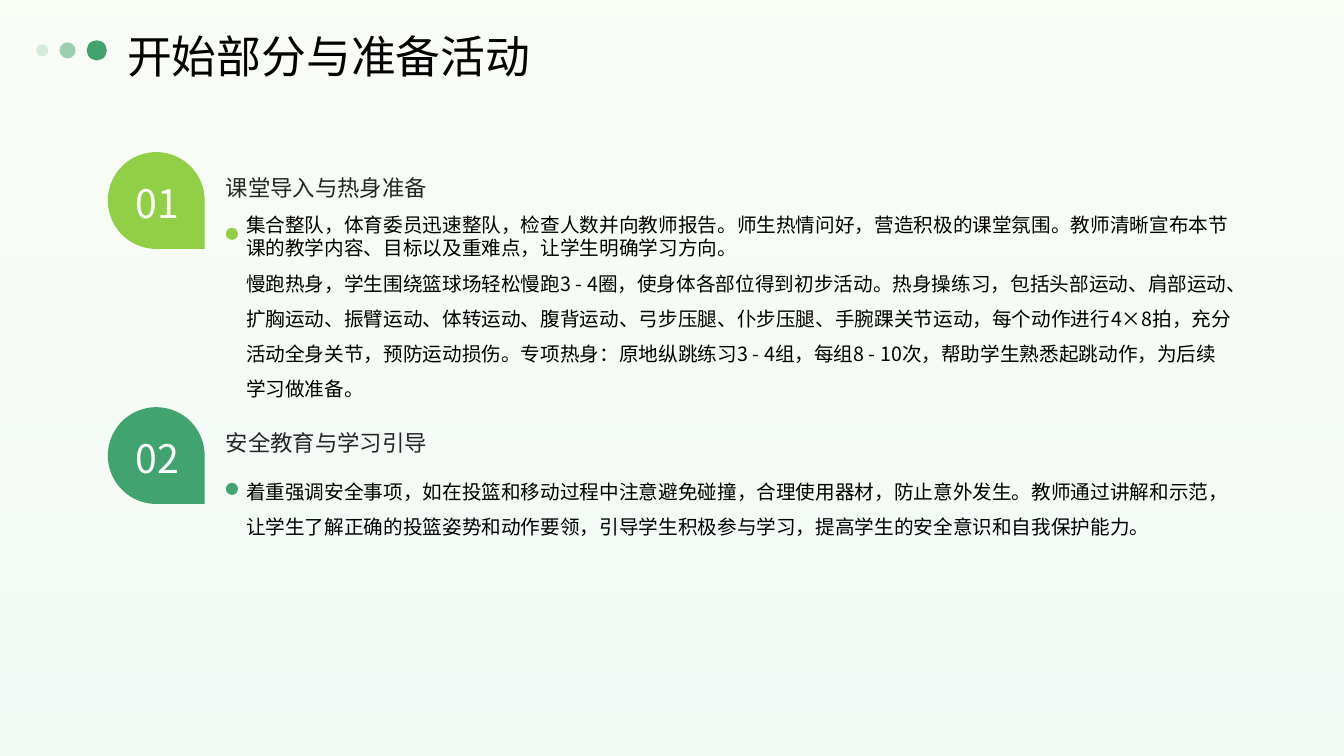
from lxml import etree
from pptx import Presentation
from pptx.dml.color import RGBColor
from pptx.enum import shapes, text
from pptx.oxml.ns import qn
from pptx.util import Inches, Pt

FONT = "Noto Sans CJK SC"
LIME = RGBColor(0x91, 0xCF, 0x46)
GREEN = RGBColor(0x41, 0xA4, 0x6E)
MINT = RGBColor(0xD7, 0xEF, 0xE2)
PALE_LIME = RGBColor(0xE9, 0xF5, 0xDA)
WHITE = RGBColor(0xFF, 0xFF, 0xFF)
BLACK = RGBColor(0, 0, 0)
DARK = RGBColor(0x26, 0x26, 0x26)

SECTIONS = [
    ("01", "课堂导入与热身准备", LIME, [
        ("集合整队，体育委员迅速整队，检查人数并向教师报告。师生热情问好，营造积极的课堂氛围。"
         "教师清晰宣布本节课的教学内容、目标以及重难点，让学生明确学习方向。", 1.0),
        ("慢跑热身，学生围绕篮球场轻松慢跑3 - 4圈，使身体各部位得到初步活动。热身操练习，"
         "包括头部运动、肩部运动、扩胸运动、振臂运动、体转运动、腹背运动、弓步压腿、仆步压腿、"
         "手腕踝关节运动，每个动作进行4×8拍，充分活动全身关节，预防运动损伤。专项热身："
         "原地纵跳练习3 - 4组，每组8 - 10次，帮助学生熟悉起跳动作，为后续学习做准备。", 1.5),
    ]),
    ("02", "安全教育与学习引导", GREEN, [
        ("着重强调安全事项，如在投篮和移动过程中注意避免碰撞，合理使用器材，防止意外发生。"
         "教师通过讲解和示范，让学生了解正确的投篮姿势和动作要领，引导学生积极参与学习，"
         "提高学生的安全意识和自我保护能力。", 1.5),
    ]),
]
SECTION_TOP, SECTION_STEP = 1.51, 2.53
DOTS = [(0.86, 0.2, 100), (0.59, 0.16, 50), (0.36, 0.12, 20)]  # left, size, opacity
DOT_CENTER = 0.5


def set_opacity(color_el, percent):
    etree.SubElement(color_el, qn("a:alpha")).set("val", str(percent * 1000))


def place(sp, left, top, width, height):
    sp.left, sp.top = Inches(left), Inches(top)
    sp.width, sp.height = Inches(width), Inches(height)


def write(sp, paragraphs, size=14, color=BLACK, align=text.PP_ALIGN.LEFT,
          anchor=text.MSO_ANCHOR.TOP):
    """Fill sp with (text, line spacing) paragraphs in one format."""
    tf = sp.text_frame
    tf.word_wrap = True
    tf.auto_size = text.MSO_AUTO_SIZE.NONE
    tf.vertical_anchor = anchor
    tf.margin_left = tf.margin_right = tf.margin_top = tf.margin_bottom = 0
    for i, (words, spacing) in enumerate(paragraphs):
        p = tf.paragraphs[0] if i == 0 else tf.add_paragraph()
        p.alignment, p.line_spacing = align, spacing
        p.space_before = p.space_after = Pt(0)
        r = p.add_run()
        r.text = words
        r.font.size, r.font.name, r.font.color.rgb = Pt(size), FONT, color
        etree.SubElement(r.font._element, qn("a:ea")).set("typeface", FONT)


def add_text(slide, box, paragraphs, **fmt):
    sp = slide.shapes.add_textbox(*map(Inches, box))
    write(sp, paragraphs, **fmt)


def add_plain(slide, kind, box, color=None, opacity=100):
    sp = slide.shapes.add_shape(kind, *map(Inches, box))
    sp.shadow.inherit = False
    sp.line.fill.background()
    if color is not None:
        sp.fill.solid()
        sp.fill.fore_color.rgb = color
        if opacity < 100:
            set_opacity(sp._element.spPr.find(".//" + qn("a:srgbClr")), opacity)
    return sp


def add_backdrop(slide):
    sp = add_plain(slide, shapes.MSO_SHAPE.RECTANGLE, (0, 0, 13.33, 7.5))
    sp.fill.gradient()
    sp.fill.gradient_angle = 90
    tints = [(MINT, 31), (PALE_LIME, 22)]
    for position, (stop, (color, _)) in enumerate(zip(sp.fill.gradient_stops, tints)):
        stop.position, stop.color.rgb = position, color
    for el, (_, opacity) in zip(sp._element.spPr.iter(qn("a:srgbClr")), tints):
        set_opacity(el, opacity)


def add_title(slide, words):
    sp = slide.shapes.title
    place(sp, 1.26, 0.26, 11.89, 0.47)
    write(sp, [(words, 1.2)], size=32, anchor=text.MSO_ANCHOR.MIDDLE)
    slide.shapes._spTree.append(sp._element)  # in front of the backdrop


def add_section(slide, top, number, heading, color, paragraphs):
    add_text(slide, (2.24, top + 0.19, 10.01, 0.42), [(heading, 1.1)], size=16, color=DARK)
    add_text(slide, (2.44, top + 0.6, 9.81, 1.95), paragraphs)
    add_plain(slide, shapes.MSO_SHAPE.OVAL, (2.24, top + 0.75, 0.12, 0.12), color)
    badge = add_plain(slide, shapes.MSO_SHAPE.TEAR, (1.07, top, 0.96, 0.96), color)
    badge._element.spPr.find(qn("a:xfrm")).set("flipV", "1")
    add_text(slide, (1.15, top + 0.19, 0.82, 0.58), [(number, 1.1)], size=28, color=WHITE,
             align=text.PP_ALIGN.CENTER, anchor=text.MSO_ANCHOR.MIDDLE)


def main():
    prs = Presentation()
    prs.slide_width, prs.slide_height = Inches(13.33), Inches(7.5)
    slide = prs.slides.add_slide(prs.slide_layouts[5])
    add_backdrop(slide)
    for i, section in enumerate(SECTIONS):
        add_section(slide, SECTION_TOP + i * SECTION_STEP, *section)
    add_title(slide, "开始部分与准备活动")
    for left, size, opacity in DOTS:
        add_plain(slide, shapes.MSO_SHAPE.OVAL,
                  (left, DOT_CENTER - size / 2, size, size), GREEN, opacity)
    prs.save("out.pptx")


if __name__ == "__main__":
    main()
